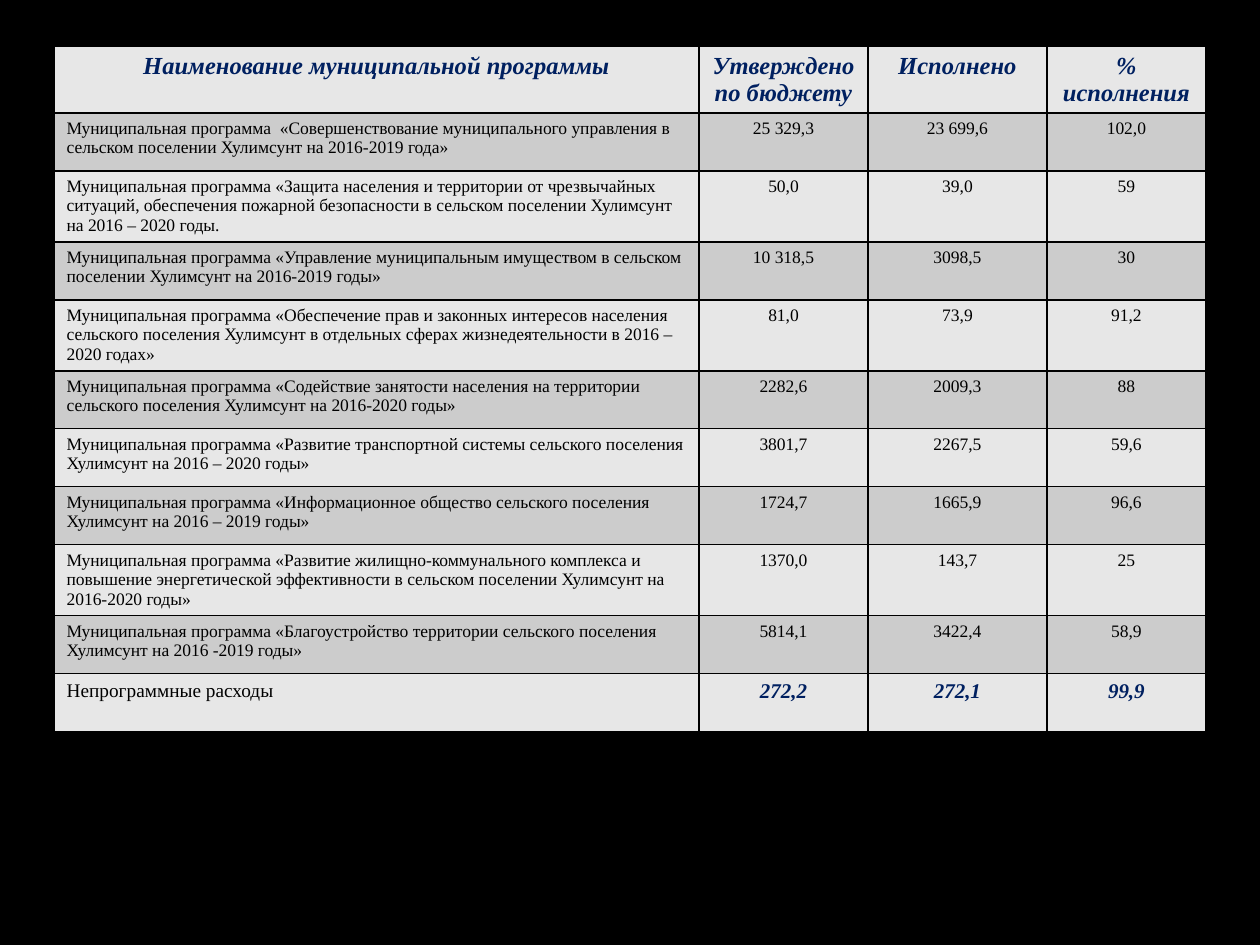
"""Build a slide with a table of municipal programme budget execution."""
from dataclasses import dataclass

from lxml import etree
from pptx import Presentation
from pptx.dml.color import RGBColor
from pptx.enum.text import PP_ALIGN
from pptx.oxml.ns import qn
from pptx.util import Emu, Pt

CENTER = PP_ALIGN.CENTER
LEFT = PP_ALIGN.LEFT

EMU_PER_PX = 914400 / 126
BLACK = RGBColor(0x00, 0x00, 0x00)
NAVY = RGBColor(0x00, 0x20, 0x60)
LIGHT_GRAY = RGBColor(0xE7, 0xE7, 0xE7)
MID_GRAY = RGBColor(0xCC, 0xCC, 0xCC)
FONT_NAME = "Times New Roman"
BORDER_SIDES = ("a:lnL", "a:lnR", "a:lnT", "a:lnB")
COLUMN_WIDTHS = (645, 169, 179, 159)
HEADER_HEIGHT = 66
TWO_LINE_HEIGHT = 58
THREE_LINE_HEIGHT = 71


@dataclass(frozen=True)
class TextStyle:
    size: int
    color: RGBColor = BLACK
    emphasis: bool = False


HEADING = TextStyle(14, NAVY, True)
BODY = TextStyle(10)
OTHER_LABEL = TextStyle(11)
OTHER_VALUE = TextStyle(12, NAVY, True)


@dataclass(frozen=True)
class BudgetRow:
    name: str
    approved: str
    executed: str
    percent: str
    height: int = TWO_LINE_HEIGHT
    name_style: TextStyle = BODY
    value_style: TextStyle = BODY
    name_align: PP_ALIGN = LEFT


def program(title: str, approved: str, executed: str, percent: str,
            height: int = TWO_LINE_HEIGHT) -> BudgetRow:
    return BudgetRow(f"Муниципальная программа {title}", approved, executed, percent, height)


BUDGET_ROWS = (
    BudgetRow("Наименование муниципальной программы", "Утверждено по бюджету",
              "Исполнено", "% исполнения", HEADER_HEIGHT, HEADING, HEADING, CENTER),
    program(" «Совершенствование муниципального управления в сельском поселении "
            "Хулимсунт на 2016-2019 года»", "25 329,3", "23 699,6", "102,0"),
    program("«Защита населения и территории от чрезвычайных ситуаций, обеспечения "
            "пожарной безопасности в сельском поселении Хулимсунт на 2016 – 2020 годы.",
            "50,0", "39,0", "59", THREE_LINE_HEIGHT),
    program("«Управление муниципальным имуществом в сельском поселении Хулимсунт "
            "на 2016-2019 годы»", "10 318,5", "3098,5", "30"),
    program("«Обеспечение прав и законных интересов населения сельского поселения "
            "Хулимсунт в отдельных сферах жизнедеятельности в 2016 – 2020 годах»",
            "81,0", "73,9", "91,2", THREE_LINE_HEIGHT),
    program("«Содействие занятости населения на территории  сельского поселения "
            "Хулимсунт на 2016-2020 годы»", "2282,6", "2009,3", "88"),
    program("«Развитие транспортной системы сельского поселения Хулимсунт "
            "на 2016 – 2020 годы»", "3801,7", "2267,5", "59,6"),
    program("«Информационное общество сельского поселения Хулимсунт "
            "на 2016 – 2019 годы»", "1724,7", "1665,9", "96,6"),
    program("«Развитие жилищно-коммунального комплекса и повышение энергетической "
            "эффективности в сельском поселении Хулимсунт на 2016-2020 годы»",
            "1370,0", "143,7", "25", THREE_LINE_HEIGHT),
    program("«Благоустройство территории сельского поселения Хулимсунт "
            "на 2016 -2019 годы»", "5814,1", "3422,4", "58,9"),
    BudgetRow("Непрограммные расходы", "272,2", "272,1", "99,9",
              name_style=OTHER_LABEL, value_style=OTHER_VALUE),
)


def px(length: int) -> Emu:
    return Emu(round(length * EMU_PER_PX))


def add_borders(cell) -> None:
    properties = cell._tc.get_or_add_tcPr()
    for position, side in enumerate(BORDER_SIDES):
        line = etree.Element(qn(side), w=str(Pt(1)))
        fill = etree.SubElement(line, qn("a:solidFill"))
        etree.SubElement(fill, qn("a:srgbClr"), val=str(BLACK))
        properties.insert(position, line)


def write_cell(cell, text: str, style: TextStyle, align: PP_ALIGN, shade: RGBColor) -> None:
    cell.fill.solid()
    cell.fill.fore_color.rgb = shade
    add_borders(cell)
    cell.text_frame.text = text
    paragraph = cell.text_frame.paragraphs[0]
    paragraph.alignment = align
    font = paragraph.runs[0].font
    font.name = FONT_NAME
    font.size = Pt(style.size)
    font.bold = font.italic = style.emphasis
    font.color.rgb = style.color


def add_budget_table(slide, left: int, top: int) -> None:
    total_height = sum(row.height for row in BUDGET_ROWS)
    table = slide.shapes.add_table(
        len(BUDGET_ROWS), len(COLUMN_WIDTHS), px(left), px(top),
        px(sum(COLUMN_WIDTHS)), px(total_height)).table
    for column, width in zip(table.columns, COLUMN_WIDTHS):
        column.width = px(width)
    for index, budget in enumerate(BUDGET_ROWS):
        table.rows[index].height = px(budget.height)
        shade = MID_GRAY if index % 2 else LIGHT_GRAY
        write_cell(table.cell(index, 0), budget.name, budget.name_style,
                   budget.name_align, shade)
        values = (budget.approved, budget.executed, budget.percent)
        for column_index, value in enumerate(values, start=1):
            write_cell(table.cell(index, column_index), value, budget.value_style,
                       CENTER, shade)


def main() -> None:
    presentation = Presentation()
    presentation.slide_width = px(1260)
    presentation.slide_height = px(945)
    slide = presentation.slides.add_slide(presentation.slide_layouts[6])
    slide.background.fill.solid()
    slide.background.fill.fore_color.rgb = BLACK
    add_budget_table(slide, 54, 46)
    presentation.save("out.pptx")


if __name__ == "__main__":
    main()
